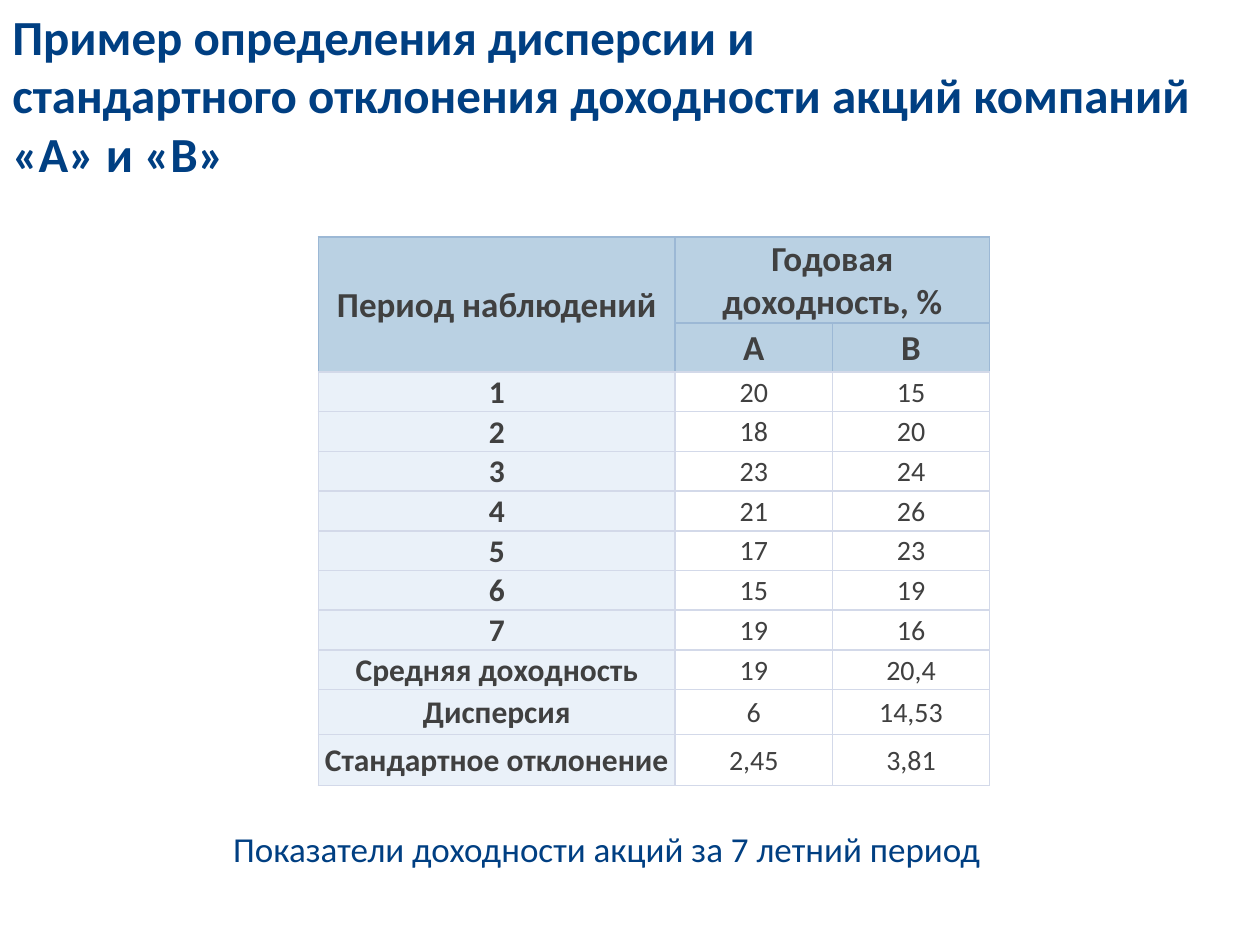
from typing import NamedTuple

from lxml.etree import SubElement
from pptx import Presentation
from pptx.dml.color import RGBColor
from pptx.enum.text import MSO_ANCHOR as Anchor, PP_ALIGN as Align
from pptx.oxml.ns import qn
from pptx.util import Cm, Pt

FONT = "Calibri"
NAVY = RGBColor(0x00, 0x3F, 0x82)
GRAY = RGBColor(0x40, 0x40, 0x40)
HEAD = RGBColor(0xBA, 0xD1, 0xE3)
SIDE = RGBColor(0xEA, 0xF1, 0xF9)
EDGE = RGBColor(0x9C, 0xB8, 0xD5)
RULE = RGBColor(0xD3, 0xD9, 0xE9)


class Look(NamedTuple):
    size: int
    color: RGBColor
    bold: bool = False


class Note(NamedTuple):
    left: float
    top: float
    width: float
    height: float
    lines: tuple[str, ...]
    look: Look
    space: float = 1.0


class Row(NamedTuple):
    label: str
    a: str
    b: str
    height: float = 0.8


NOTES = (
    Note(0, 0, 25.4, 2.46,
         ("Пример определения дисперсии и",
          "стандартного отклонения доходности акций компаний «А» и «В»"),
         Look(28, NAVY, True)),
    Note(4.45, 16.66, 18.08, 1.02,
         ("Показатели доходности акций за 7 летний период",),
         Look(20, NAVY), 0.9),
)

ROWS = (
    Row("Период наблюдений", "Годовая доходность, %", "", 1.73),
    Row("", "А", "В", 0.99),
    Row("1", "20", "15"),
    Row("2", "18", "20"),
    Row("3", "23", "24"),
    Row("4", "21", "26"),
    Row("5", "17", "23"),
    Row("6", "15", "19"),
    Row("7", "19", "16"),
    Row("Средняя доходность", "19", "20,4"),
    Row("Дисперсия", "6", "14,53", 0.91),
    Row("Стандартное отклонение", "2,45", "3,81", 1.02),
)
COLS = (7.19, 3.17, 3.17)
TOP_ROWS = 2


def add_run(para, text: str, look: Look) -> None:
    run = para.add_run()
    run.text = text
    font = run.font
    font.name, font.size, font.bold = FONT, Pt(look.size), look.bold
    font.color.rgb = look.color


def add_note(slide, note: Note) -> None:
    box = slide.shapes.add_textbox(Cm(note.left), Cm(note.top),
                                   Cm(note.width), Cm(note.height))
    frame = box.text_frame
    frame.word_wrap = True
    for i, line in enumerate(note.lines):
        para = frame.add_paragraph() if i else frame.paragraphs[0]
        para.line_spacing = note.space
        add_run(para, line, note.look)


def set_edges(cell, colors: dict[str, RGBColor]) -> None:
    props = cell._tc.get_or_add_tcPr()
    for i, (side, color) in enumerate(colors.items()):
        line = SubElement(props, qn(f"a:ln{side}"), w=str(Pt(1)))
        fill = SubElement(line, qn("a:solidFill"))
        SubElement(fill, qn("a:srgbClr"), val=str(color))
        props.insert(i, line)  # borders come before the fill


def fill_cell(cell, text: str, row: int, col: int) -> None:
    top = row < TOP_ROWS
    cell.margin_left = cell.margin_right = cell.margin_top = Cm(0.03)
    cell.margin_bottom = Cm(0)
    cell.vertical_anchor = Anchor.MIDDLE
    if top or col == 0:
        cell.fill.solid()
        cell.fill.fore_color.rgb = HEAD if top else SIDE
    else:
        cell.fill.background()

    # The header is edged in blue, except where it meets the body
    edges = dict.fromkeys("LRTB", EDGE if top else RULE)
    if row == TOP_ROWS - 1 or (top and col == 0):
        edges["B"] = RULE
    set_edges(cell, edges)

    para = cell.text_frame.paragraphs[0]
    para.alignment = Align.CENTER
    size = 20 if top else 18 if col == 0 else 16
    if text:
        add_run(para, text, Look(size, GRAY, top or col == 0))


def add_grid(slide) -> None:
    high = sum(row.height for row in ROWS)
    table = slide.shapes.add_table(len(ROWS), len(COLS), Cm(6.42), Cm(4.78),
                                   Cm(sum(COLS)), Cm(high)).table
    table.first_row = table.horz_banding = False
    for col, width in zip(table.columns, COLS):
        col.width = Cm(width)
    for r, row in enumerate(ROWS):
        table.rows[r].height = Cm(row.height)
        for c, text in enumerate((row.label, row.a, row.b)):
            fill_cell(table.cell(r, c), text, r, c)
    table.cell(0, 0).merge(table.cell(1, 0))
    table.cell(0, 1).merge(table.cell(0, 2))


def main() -> None:
    deck = Presentation()
    deck.slide_width, deck.slide_height = Cm(25.4), Cm(19.05)
    slide = deck.slides.add_slide(deck.slide_layouts[6])

    # Title and caption
    for note in NOTES:
        add_note(slide, note)

    # Table of yields
    add_grid(slide)
    deck.save("out.pptx")


if __name__ == "__main__":
    main()
